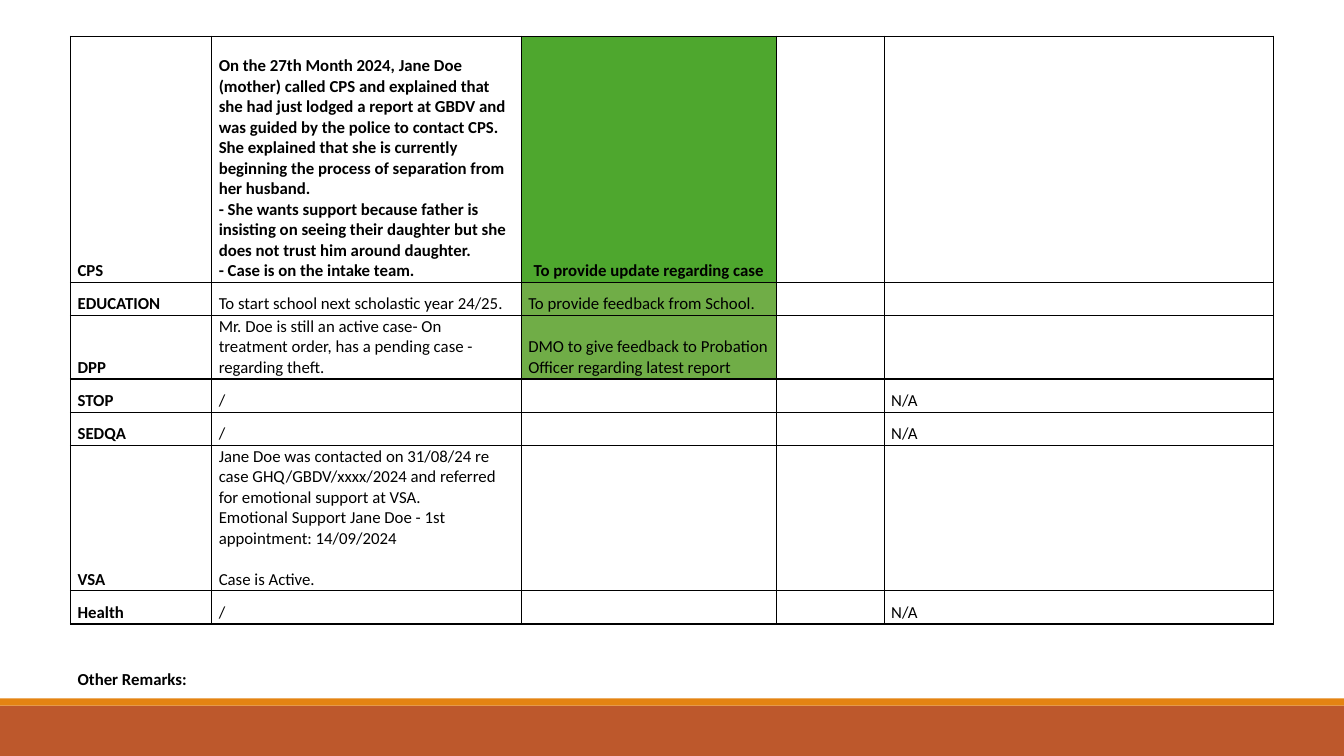
"""Builds the case conference table slide with agency updates and remarks."""
from lxml.etree import SubElement
from pptx import Presentation
from pptx.dml.color import RGBColor as RGB
from pptx.enum.shapes import MSO_SHAPE as Shape
from pptx.enum.text import MSO_ANCHOR as Anchor, PP_ALIGN as Align
from pptx.oxml.ns import qn
from pptx.util import Inches, Pt

THEME = {
    "font": "Calibri", "size": Pt(12), "ink": "000000",
    "bold_green": "4EA72E", "green": "70AD47",
    "band": "BD582C", "stripe": "E48312", "border": Pt(1),
}
WIDTH, HEIGHT = 13.33, 7.5
LEFT, TOP = 0.7, 0.36
COLUMNS = [1.4, 3.07, 2.53, 1.07, 3.86]
LINE_ROW = 0.33
ROWS = [2.44, LINE_ROW, 0.63, LINE_ROW, LINE_ROW, 1.44] + [LINE_ROW] * 3
BORDERED_ROWS = 7
CASE_UPDATE = (
    "On the 27th Month 2024, Jane Doe (mother) called CPS and explained that she had just "
    "lodged a report at GBDV and was guided by the police to contact CPS. She explained that "
    "she is currently beginning the process of separation from her husband.\n"
    "- She wants support because father is insisting on seeing their daughter but she does "
    "not trust him around daughter.\n"
    "- Case is on the intake team."
)
SUPPORT_UPDATE = (
    "Jane Doe was contacted on 31/08/24 re case GHQ/GBDV/xxxx/2024 and referred for emotional "
    "support at VSA.\n"
    "Emotional Support Jane Doe - 1st appointment: 14/09/2024\n"
    "Case is Active."
)
CONTENT = [
    ["CPS", CASE_UPDATE, "To provide update regarding case", "", ""],
    ["EDUCATION", "To start school next scholastic year 24/25.",
     "To provide feedback from School.", "", ""],
    ["DPP", "Mr. Doe is still an active case- On treatment order, has a pending case - "
     "regarding theft.",
     "DMO to give feedback to Probation Officer regarding latest report", "", ""],
    ["STOP", "/", "", "", "N/A"],
    ["SEDQA", "/", "", "", "N/A"],
    ["VSA", SUPPORT_UPDATE, "", "", ""],
    ["Health", "/", "", "", "N/A"],
    [""] * 5,
    ["Other Remarks:", "", "", "", ""],
]
ACTION_FILLS = [THEME["bold_green"], THEME["green"], THEME["green"]]


def set_borders(cell, visible_sides):
    properties = cell._tc.get_or_add_tcPr()
    for position, side in enumerate("LRTB"):
        line = SubElement(properties, qn(f"a:ln{side}"), w=str(THEME["border"]))
        if side in visible_sides:
            fill = SubElement(line, qn("a:solidFill"))
            SubElement(fill, qn("a:srgbClr"), val=THEME["ink"])
        else:
            SubElement(line, qn("a:noFill"))
        properties.insert(position, line)


deck = Presentation()
deck.slide_width, deck.slide_height = Inches(WIDTH), Inches(HEIGHT)
page = deck.slides.add_slide(deck.slide_layouts[6])

for top, height, color in [(7, 0.5, THEME["band"]), (6.93, 0.07, THEME["stripe"])]:
    bar = page.shapes.add_shape(Shape.RECTANGLE, 0, Inches(top), Inches(WIDTH), Inches(height))
    bar.shadow.inherit = False
    bar.fill.solid()
    bar.fill.fore_color.rgb = RGB.from_string(color)
    bar.line.fill.background()

table = page.shapes.add_table(
    len(ROWS), len(COLUMNS), Inches(LEFT), Inches(TOP),
    Inches(sum(COLUMNS)), Inches(sum(ROWS))).table
table.first_row = table.horz_banding = False
for column, width in zip(table.columns, COLUMNS):
    column.width = Inches(width)
for row, height in zip(table.rows, ROWS):
    row.height = Inches(height)

for row_index, texts in enumerate(CONTENT):
    for column_index, text in enumerate(texts):
        cell = table.cell(row_index, column_index)
        cell.vertical_anchor = Anchor.BOTTOM
        cell.margin_left = cell.margin_right = Inches(0.07)
        cell.margin_top = cell.margin_bottom = Inches(0.01)
        if column_index == 2 and row_index < len(ACTION_FILLS):
            cell.fill.solid()
            cell.fill.fore_color.rgb = RGB.from_string(ACTION_FILLS[row_index])
        else:
            cell.fill.background()
        if row_index < BORDERED_ROWS:
            set_borders(cell, "LRTB")
        else:
            set_borders(cell, "T" if row_index == BORDERED_ROWS else "")
        if not text:
            continue
        cell.text_frame.text = text
        for para in cell.text_frame.paragraphs:
            for span in para.runs:
                span.font.name = THEME["font"]
                span.font.size = THEME["size"]
                span.font.bold = column_index == 0 or row_index == 0
                span.font.color.rgb = RGB.from_string(THEME["ink"])

table.cell(0, 2).text_frame.paragraphs[0].alignment = Align.CENTER
table.cell(5, 1).text_frame.paragraphs[-1].space_before = Pt(14.6)

deck.save("out.pptx")
